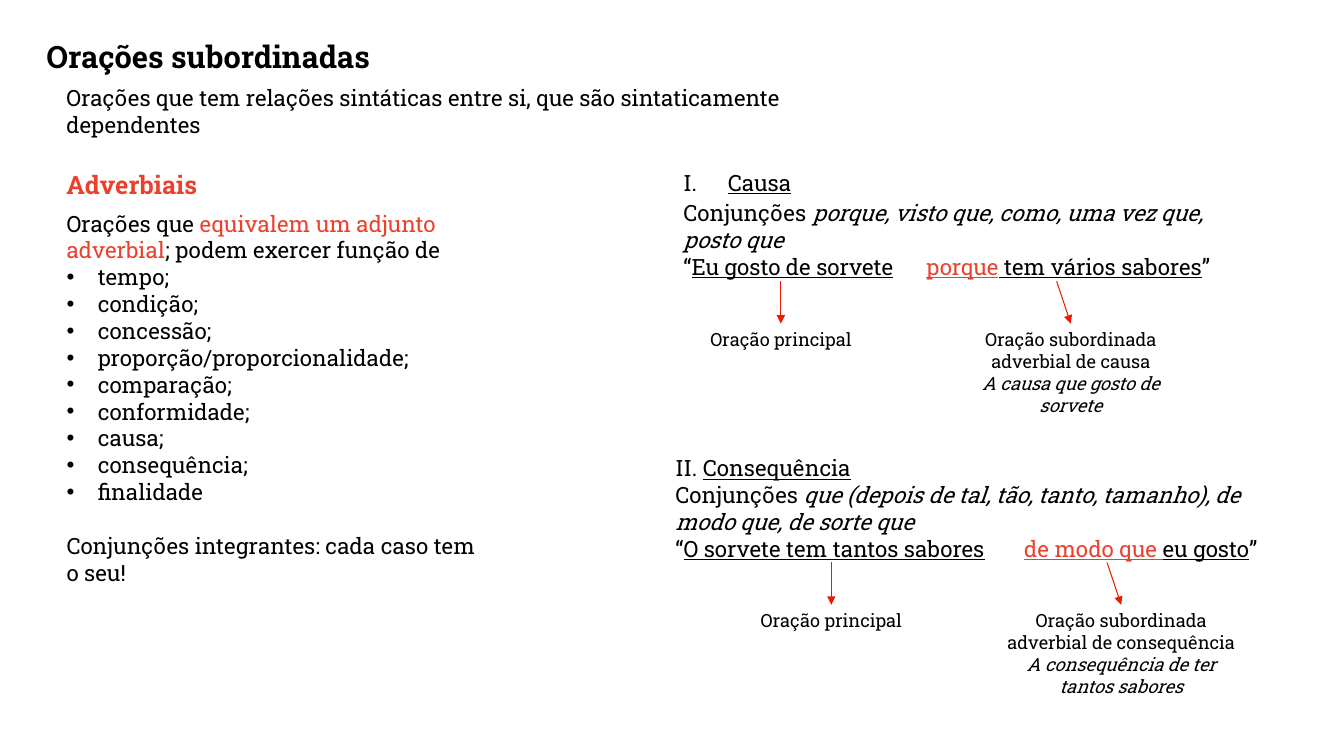
import pptx
import pptx.dml.color
import pptx.enum.shapes
import pptx.enum.text
import pptx.oxml
import pptx.oxml.ns
import pptx.util

Inches = pptx.util.Inches
Pt = pptx.util.Pt
ALIGN = pptx.enum.text.PP_ALIGN
BLACK, RED, ARROW_RED = "000000", "EB402C", "ED1A02"


def color(hex_string):
    return pptx.dml.color.RGBColor.from_string(hex_string)


def write(box, place, paragraphs, size, align=ALIGN.LEFT):
    """Fill a box with paragraphs of (text, marks): b bold, i italic, u underline, r red, + larger."""
    box.left, box.top, box.width, box.height = [Inches(length) for length in place]
    frame = box.text_frame
    frame.word_wrap = True
    frame.auto_size = pptx.enum.text.MSO_AUTO_SIZE.NONE
    frame.vertical_anchor = pptx.enum.text.MSO_ANCHOR.TOP
    for index, runs in enumerate(paragraphs):
        para = frame.add_paragraph() if index else frame.paragraphs[0]
        para.alignment = align
        para.space_before = Pt(0)
        for text, marks in runs:
            span = para.add_run()
            span.text = text
            span.font.name = "Roboto Slab"
            span.font.size = Pt(size + 2 if "+" in marks else size)
            span.font.bold = "b" in marks
            span.font.italic = "i" in marks
            span.font.underline = "u" in marks
            span.font.color.rgb = color(RED if "r" in marks else BLACK)
    return frame.paragraphs


deck = pptx.Presentation()
deck.slide_width, deck.slide_height = Inches(13.33), Inches(7.5)
page = deck.slides.add_slide(deck.slide_layouts[1])
shapes = page.shapes
namespace = pptx.oxml.ns.nsdecls("a")

# Headings
write(shapes.title, (0.36, 0.32, 3.61, 0.47), [[("Orações subordinadas", "b")]], 22)
write(shapes.add_textbox(0, 0, 0, 0), (0.56, 0.79, 8.59, 0.64),
      [[("Orações que tem relações sintáticas entre si, que são sintaticamente dependentes", "")]], 16)
write(shapes.add_textbox(0, 0, 0, 0), (0.56, 1.63, 1.55, 0.4), [[("Adverbiais", "br")]], 18)

# Definition and list of functions
functions = ["tempo;", "condição;", "concessão;", "proporção/proporcionalidade;", "comparação;",
             "conformidade;", "causa;", "consequência;", "finalidade"]
definition = [("Orações que ", ""), ("equivalem um adjunto adverbial", "r"),
              ("; podem exercer função de", "")]
closing = [("Conjunções integrantes: cada caso tem o seu!", "")]
body_paras = write(page.placeholders[1], (0.56, 2.03, 4.31, 3.87),
                   [definition] + [[(name, "")] for name in functions] + [closing], 16)
for para in body_paras:
    properties = para._p.get_or_add_pPr()
    listed = para.text in functions
    properties.set("marL", str(Inches(0.31 if listed else 0)))
    properties.set("indent", str(Inches(-0.31 if listed else 0)))
    bullet = '<a:buChar %s char="•"/>' if listed else "<a:buNone %s/>"
    properties.append(pptx.oxml.parse_xml(bullet % namespace))
body_paras[-1].space_before = Pt(19.2)

# The two clause types: text, tab position of the subordinate clause, labels below
causa = [
    [("Causa", "u")],
    [("Conjunções", ""), (" ", "+"), ("porque, visto que, como, uma vez que, posto que", "i")],
    [("“", ""), ("Eu gosto de sorvete", "u"), ("\t", ""), ("porque", "ur"),
     (" tem vários sabores", "u"), ("”", "")],
]
consequencia = [
    [("II. ", ""), ("Consequência", "u")],
    [("Conjunções ", ""),
     ("que (depois de tal, tão, tanto, tamanho), de modo que, de sorte que", "i")],
    [("“", ""), ("O sorvete tem tantos sabores", "u"), ("\t", ""), ("de modo que ", "ur"),
     ("eu gosto", "u"), ("”", "")],
]
clauses = [
    ((6.68, 1.63, 5.53, 1.21), causa, 2.41, 3.21, 6.6, 9.34,
     "Oração subordinada adverbial de causa", "A causa que gosto de sorvete"),
    ((6.6, 4.46, 6.12, 1.18), consequencia, 3.46, 6, 7.1, 9.84,
     "Oração subordinada adverbial de consequência", "A consequência de ter tantos sabores"),
]
for place, paragraphs, tab, label_top, main_left, clause_left, clause, meaning in clauses:
    paras = write(shapes.add_textbox(0, 0, 0, 0), place, paragraphs, 16)
    if paragraphs is causa:
        numbering = paras[0]._p.get_or_add_pPr()
        numbering.set("marL", str(Inches(0.44)))
        numbering.set("indent", str(Inches(-0.44)))
        numbering.append(pptx.oxml.parse_xml(
            f'<a:buFont {namespace} typeface="Roboto Slab"/>'))
        numbering.append(pptx.oxml.parse_xml(
            f'<a:buAutoNum {namespace} type="romanUcPeriod"/>'))
    paras[-1]._p.get_or_add_pPr().append(pptx.oxml.parse_xml(
        f'<a:tabLst {namespace}><a:tab pos="{Inches(tab)}" algn="l"/></a:tabLst>'))

    labels = [
        (main_left, 2.29, 0.32, 0, [[("Oração principal", "")]]),
        (clause_left, 2.56, 0.98, 0.14, [[(clause, "")], [(meaning, "i")]]),
    ]
    for left, width, height, slant, lines in labels:
        label = shapes.add_textbox(0, 0, 0, 0)
        write(label, (left, label_top, width, height), lines, 13, ALIGN.CENTER)
        middle = left + width / 2
        arrow = shapes.add_connector(
            pptx.enum.shapes.MSO_CONNECTOR.STRAIGHT, Inches(middle - slant),
            Inches(label_top - 0.42), Inches(middle), Inches(label_top))
        arrow.end_connect(label, 0)
        arrow.line.color.rgb = color(ARROW_RED)
        arrow.line.width = Pt(0.75)
        arrow.line._get_or_add_ln().append(
            pptx.oxml.parse_xml(f'<a:tailEnd {namespace} type="triangle"/>'))
        arrow._element.spPr.append(pptx.oxml.parse_xml(f"<a:effectLst {namespace}/>"))

deck.save("out.pptx")
